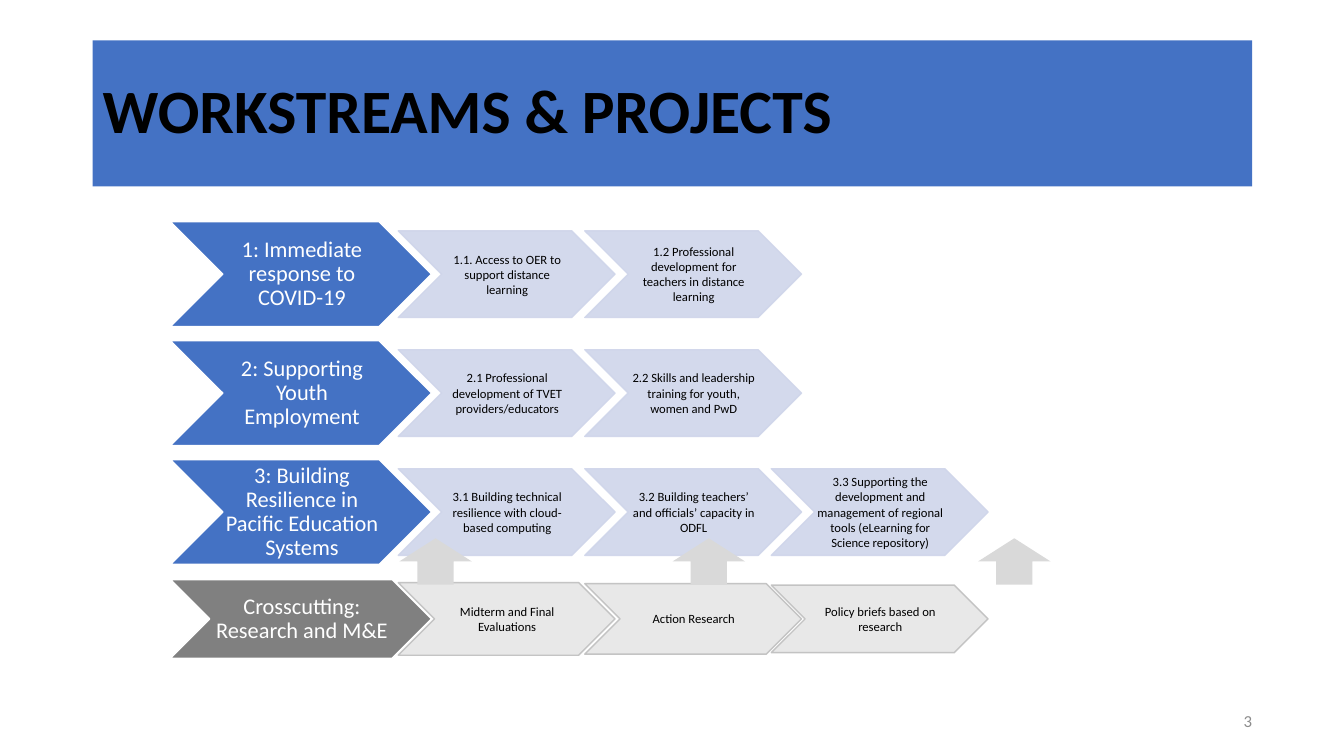
import dataclasses

import lxml.etree
import pptx
import pptx.dml.color
import pptx.enum.shapes
import pptx.enum.text
import pptx.oxml.ns
import pptx.util

Inches = pptx.util.Inches
Shape = pptx.enum.shapes.MSO_SHAPE
Align = pptx.enum.text.PP_ALIGN


@dataclasses.dataclass(frozen=True)
class Theme:
    font: str = "Calibri"
    blue: str = "4472C4"
    pale_blue: str = "CFD5EA"
    gray: str = "808080"
    pale_gray: str = "E6E6E6"
    gray_edge: str = "BFBFBF"
    arrow: str = "D9D9D9"
    white: str = "FFFFFF"
    black: str = "000000"
    number: str = "8C8C8C"
    title_size: int = 44
    stream_size: int = 16
    number_size: int = 12
    project_size: int = 9


THEME = Theme()

WORKSTREAMS = [
    ("1: Immediate response to COVID-19",
     ["1.1. Access to OER to support distance learning",
      "1.2 Professional development for teachers in distance learning"]),
    ("2: Supporting Youth Employment",
     ["2.1 Professional development of TVET providers/educators",
      "2.2 Skills and leadership training for youth, women and PwD"]),
    ("3: Building Resilience in Pacific Education Systems",
     ["3.1 Building technical resilience with cloud-based computing",
      "3.2 Building teachers’ and officials’ capacity in ODFL",
      "3.3 Supporting the development and management of regional tools "
      "(eLearning for Science repository)"]),
]
CROSSCUTTING = "Crosscutting: Research and M&E"
RESEARCH = [
    ("Midterm and Final Evaluations", 0.72),
    ("Action Research", 0.7),
    ("Policy briefs based on research", 0.67),
]

STREAM_LEFT, STREAM_WIDTH, STREAM_HEIGHT = 1.69, 2.59, 1.04
PROJECT_LEFT, PROJECT_WIDTH, PROJECT_HEIGHT = 3.95, 2.15, 0.86
PROJECT_PITCH = 1.85
FIRST_MIDDLE, ROW_PITCH = 2.72, 1.18
CROSS_MIDDLE, CROSS_HEIGHT = 6.14, 0.78


def rgb(color):
    return pptx.dml.color.RGBColor.from_string(color)


def write(frame, text, size, color, align=Align.CENTER, bold=False,
          spacing=1.0, insets=(0.01, 0.01, 0, 0.01)):
    frame.word_wrap = True
    frame.vertical_anchor = pptx.enum.text.MSO_ANCHOR.MIDDLE
    (frame.margin_left, frame.margin_top,
     frame.margin_right, frame.margin_bottom) = map(Inches, insets)
    paragraph = frame.paragraphs[0]
    paragraph.alignment = align
    paragraph.line_spacing = spacing
    run = paragraph.add_run()
    run.text = text
    run.font.name = THEME.font
    run.font.size = pptx.util.Pt(size)
    run.font.bold = bold
    run.font.color.rgb = rgb(color)


def add_block(slide, kind, left, top, width, height, fill, edge=None,
              opacity=None):
    block = slide.shapes.add_shape(
        kind, Inches(left), Inches(top), Inches(width), Inches(height))
    block.shadow.inherit = False
    block.fill.solid()
    block.fill.fore_color.rgb = rgb(fill)
    if edge:
        block.line.color.rgb = rgb(edge)
        block.line.width = pptx.util.Pt(1)
    else:
        block.line.fill.background()
    if opacity:
        properties = block.fill._xPr
        for color in properties.iter(pptx.oxml.ns.qn("a:srgbClr")):
            alpha = lxml.etree.SubElement(color, pptx.oxml.ns.qn("a:alpha"))
            alpha.set("val", str(opacity * 1000))
    return block


def add_stream(slide, text, middle, height, fill):
    stream = add_block(slide, Shape.CHEVRON, STREAM_LEFT, middle - height / 2,
                       STREAM_WIDTH, height, fill, THEME.white)
    write(stream.text_frame, text, THEME.stream_size, THEME.white,
          spacing=0.9, insets=(0.02, 0.01, 0, 0.01))


def add_project(slide, text, column, middle, height, fill, edge):
    project = add_block(slide, Shape.CHEVRON,
                        PROJECT_LEFT + column * PROJECT_PITCH,
                        middle - height / 2, PROJECT_WIDTH, height,
                        fill, edge, opacity=90)
    write(project.text_frame, text, THEME.project_size, THEME.black)


def add_title(slide, text):
    banner = add_block(slide, Shape.RECTANGLE, 0.92, 0.4, 11.5, 1.45,
                       THEME.blue)
    write(banner.text_frame, text, THEME.title_size, THEME.black,
          align=Align.LEFT, bold=True, spacing=0.9,
          insets=(0.1, 0.05, 0.1, 0.05))


def add_page_number(slide, text):
    number = slide.shapes.add_textbox(
        Inches(9.42), Inches(6.95), Inches(3), Inches(0.4))
    write(number.text_frame, text, THEME.number_size, THEME.number,
          align=Align.RIGHT, insets=(0, 0, 0, 0))


def add_up_arrow(slide, left):
    arrow = add_block(slide, Shape.RIGHT_ARROW, left, 5.21, 0.46, 0.72,
                      THEME.arrow)
    arrow.rotation = 270


def main():
    deck = pptx.Presentation()
    deck.slide_width = Inches(13.33)
    deck.slide_height = Inches(7.5)
    slide = deck.slides.add_slide(deck.slide_layouts[6])

    add_title(slide, "WORKSTREAMS & PROJECTS")
    add_page_number(slide, "3")

    for row, (stream, projects) in enumerate(WORKSTREAMS):
        middle = FIRST_MIDDLE + row * ROW_PITCH
        add_stream(slide, stream, middle, STREAM_HEIGHT, THEME.blue)
        for column, project in enumerate(projects):
            add_project(slide, project, column, middle, PROJECT_HEIGHT,
                        THEME.pale_blue, THEME.pale_blue)

    add_stream(slide, CROSSCUTTING, CROSS_MIDDLE, CROSS_HEIGHT, THEME.gray)
    for column, (study, height) in enumerate(RESEARCH):
        add_project(slide, study, column, CROSS_MIDDLE, height,
                    THEME.pale_gray, THEME.gray_edge)

    for left in (4.09, 6.8, 9.83):
        add_up_arrow(slide, left)

    deck.save("out.pptx")


if __name__ == "__main__":
    main()
